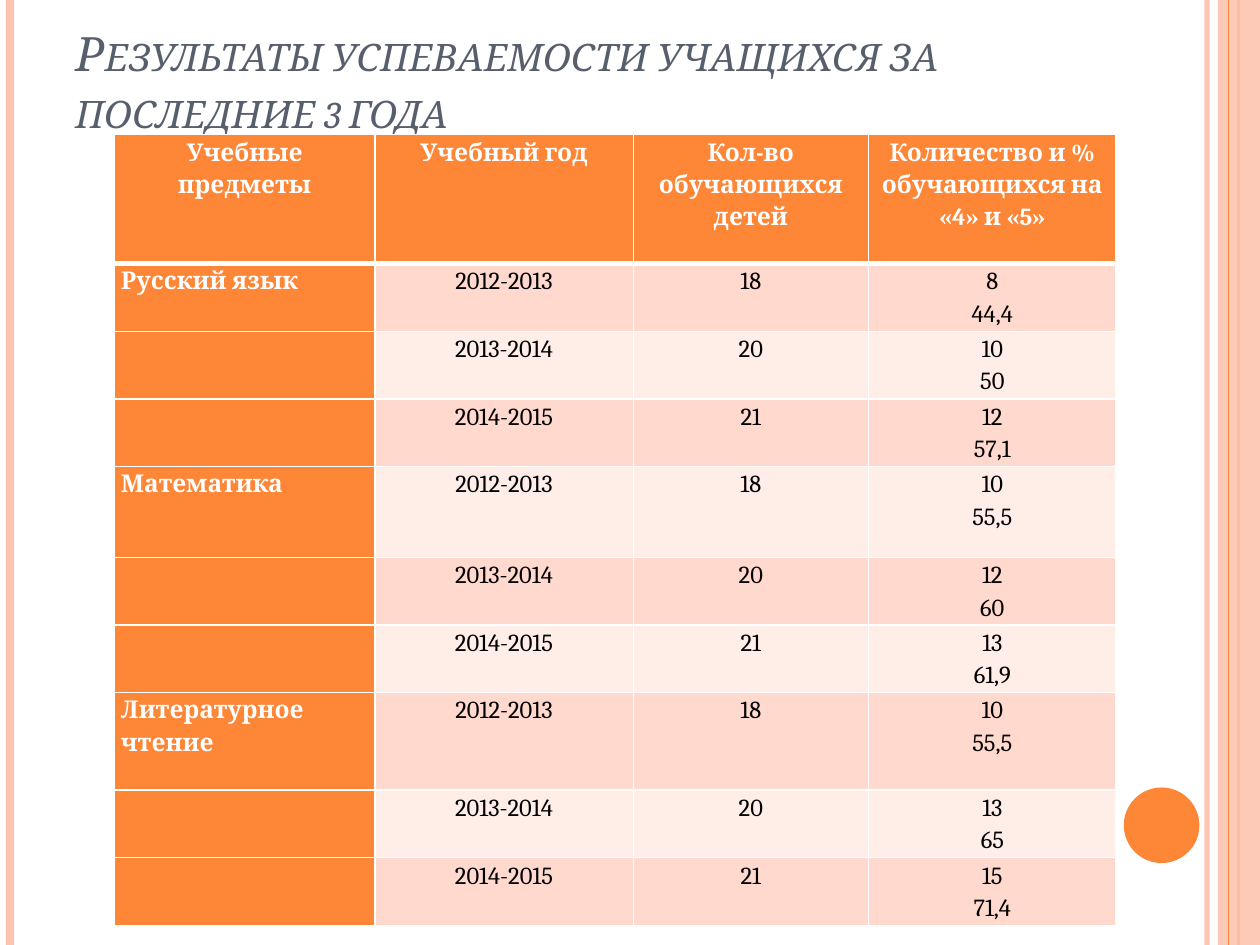
from dataclasses import dataclass

from lxml.etree import SubElement
from pptx import Presentation
from pptx.dml.color import RGBColor
from pptx.enum.shapes import MSO_CONNECTOR as Connector, MSO_SHAPE as Shape
from pptx.enum.text import MSO_ANCHOR as Anchor, PP_ALIGN as Align
from pptx.oxml.ns import qn
from pptx.util import Pt

COLORS = {
    "orange": "FE8637",
    "peach": "FEC3AE",
    "band_dark": "FFD9CE",
    "band_light": "FFEDE8",
    "title": "575F6D",
    "white": "FFFFFF",
    "black": "000000",
}
FONT = "Cambria"
PAGE_WIDTH, PAGE_HEIGHT = 720, 540


@dataclass
class Stripe:
    x: float
    width: float
    color: str
    opacity: int = 100


@dataclass
class YearResult:
    year: str
    pupils: str
    good: str
    percent: str


@dataclass
class Subject:
    name: str
    first_row_height: float
    results: list[YearResult]


LEFT_STRIPES = [
    Stripe(689.76, 3, "peach", 93),
    Stripe(5.76, 4.5, "peach"),
    Stripe(707.76, 1.5, "orange"),
]
EDGE_STRIPE = Stripe(702, 0.75, "orange")

COLUMN_WIDTHS = [148.7, 147.7, 134.4, 141.6]
HEADER_HEIGHT, ROW_HEIGHT = 73.7, 37.1
HEADERS = [
    ["Учебные", "предметы"],
    ["Учебный год"],
    ["Кол-во обучающихся детей"],
    ["Количество и % обучающихся на «4» и «5»"],
]
SUBJECTS = [
    Subject("Русский язык", ROW_HEIGHT, [
        YearResult("2012-2013", "18", "8", "44,4"),
        YearResult("2013-2014", "20", "10", "50"),
        YearResult("2014-2015", "21", "12", "57,1"),
    ]),
    Subject("Математика", 52, [
        YearResult("2012-2013", "18", "10", "55,5"),
        YearResult("2013-2014", "20", "12", "60"),
        YearResult("2014-2015", "21", "13", "61,9"),
    ]),
    Subject("Литературное чтение", 55.7, [
        YearResult("2012-2013", "18", "10", "55,5"),
        YearResult("2013-2014", "20", "13", "65"),
        YearResult("2014-2015", "21", "15", "71,4"),
    ]),
]


def rgb(name: str) -> RGBColor:
    return RGBColor.from_string(COLORS[name])


def set_opacity(element, percent: int) -> None:
    for color in element.iter(qn("a:srgbClr")):
        SubElement(color, qn("a:alpha"), val=str(percent * 1000))


def add_stripe(page, stripe: Stripe) -> None:
    line = page.shapes.add_connector(
        Connector.STRAIGHT, Pt(stripe.x), Pt(0), Pt(stripe.x), Pt(PAGE_HEIGHT))
    line.line.color.rgb = rgb(stripe.color)
    line.line.width = Pt(stripe.width)
    properties = line._element.spPr
    if stripe.opacity < 100:
        set_opacity(properties, stripe.opacity)
    SubElement(properties, qn("a:effectLst"))


def add_filled(page, kind: Shape, frame: tuple, color: str, opacity: int = 100) -> None:
    shape = page.shapes.add_shape(kind, *map(Pt, frame))
    shape.shadow.inherit = False
    shape.fill.solid()
    shape.fill.fore_color.rgb = rgb(color)
    shape.line.fill.background()
    if opacity < 100:
        set_opacity(shape._element.spPr, opacity)


def add_span(para, text: str, size: float, color: str, bold=False, italic=False):
    span = para.add_run()
    span.text = text
    font = span.font
    font.name, font.size = FONT, Pt(size)
    font.bold, font.italic = bold, italic
    font.color.rgb = rgb(color)
    return span


def add_title(page, text: str) -> None:
    box = page.shapes.add_textbox(Pt(36), Pt(21.6), Pt(588), Pt(90))
    frame = box.text_frame
    frame.word_wrap = True
    frame.vertical_anchor = Anchor.BOTTOM
    frame.margin_bottom = Pt(33)
    span = add_span(frame.paragraphs[0], text, 27, "title", italic=True)
    span.font._element.set("cap", "small")


def set_borders(cell, top: float, bottom: float) -> None:
    properties = cell._tc.get_or_add_tcPr()
    for side, width in (("L", 1), ("R", 1), ("T", top), ("B", bottom)):
        line = SubElement(properties, qn(f"a:ln{side}"), w=str(Pt(width)))
        fill = SubElement(line, qn("a:solidFill"))
        SubElement(fill, qn("a:srgbClr"), val=COLORS["white"])


def fill_cell(cell, lines: list[str], fill: str, color: str, bold: bool,
              align: Align, top: float = 1, bottom: float = 1) -> None:
    set_borders(cell, top, bottom)
    cell.fill.solid()
    cell.fill.fore_color.rgb = rgb(fill)
    cell.margin_left = cell.margin_right = Pt(3.6)
    cell.margin_top = cell.margin_bottom = Pt(0)
    frame = cell.text_frame
    for index, text in enumerate(lines):
        para = frame.add_paragraph() if index else frame.paragraphs[0]
        para.alignment = align
        para.line_spacing = 1.15
        add_span(para, text, 14, color, bold)


def add_results_table(page) -> None:
    heights = [HEADER_HEIGHT]
    for subject in SUBJECTS:
        heights += [subject.first_row_height] + [ROW_HEIGHT] * (len(subject.results) - 1)
    table = page.shapes.add_table(
        len(heights), len(COLUMN_WIDTHS), Pt(65.5), Pt(77),
        Pt(sum(COLUMN_WIDTHS)), Pt(sum(heights))).table
    for column, width in zip(table.columns, COLUMN_WIDTHS):
        column.width = Pt(width)
    for row, height in zip(table.rows, heights):
        row.height = Pt(height)

    # Header row
    for column, lines in enumerate(HEADERS):
        fill_cell(table.cell(0, column), lines, "orange", "white", True,
                  Align.CENTER, bottom=3)

    # Subject rows, banded
    row = 0
    for subject in SUBJECTS:
        for index, result in enumerate(subject.results):
            row += 1
            top = 3 if row == 1 else 1
            name = [] if index else [subject.name]
            fill_cell(table.cell(row, 0), name, "orange", "white", True, Align.LEFT, top)
            band = "band_dark" if row % 2 else "band_light"
            values = [[result.year], [result.pupils], [result.good, result.percent]]
            for column, lines in enumerate(values, start=1):
                fill_cell(table.cell(row, column), lines, band, "black", False,
                          Align.CENTER, top)


def main() -> None:
    deck = Presentation()
    deck.slide_width, deck.slide_height = Pt(PAGE_WIDTH), Pt(PAGE_HEIGHT)
    page = deck.slides.add_slide(deck.slide_layouts[6])

    # Side stripes and circle
    for stripe in LEFT_STRIPES:
        add_stripe(page, stripe)
    add_filled(page, Shape.RECTANGLE, (696, 0, 24, PAGE_HEIGHT), "peach", 87)
    add_stripe(page, EDGE_STRIPE)
    add_filled(page, Shape.OVAL, (642.2, 450, 43.2, 43.2), "orange")

    # Title and table
    add_title(page, "Результаты успеваемости учащихся за последние 3 года")
    add_results_table(page)
    deck.save("out.pptx")


if __name__ == "__main__":
    main()
